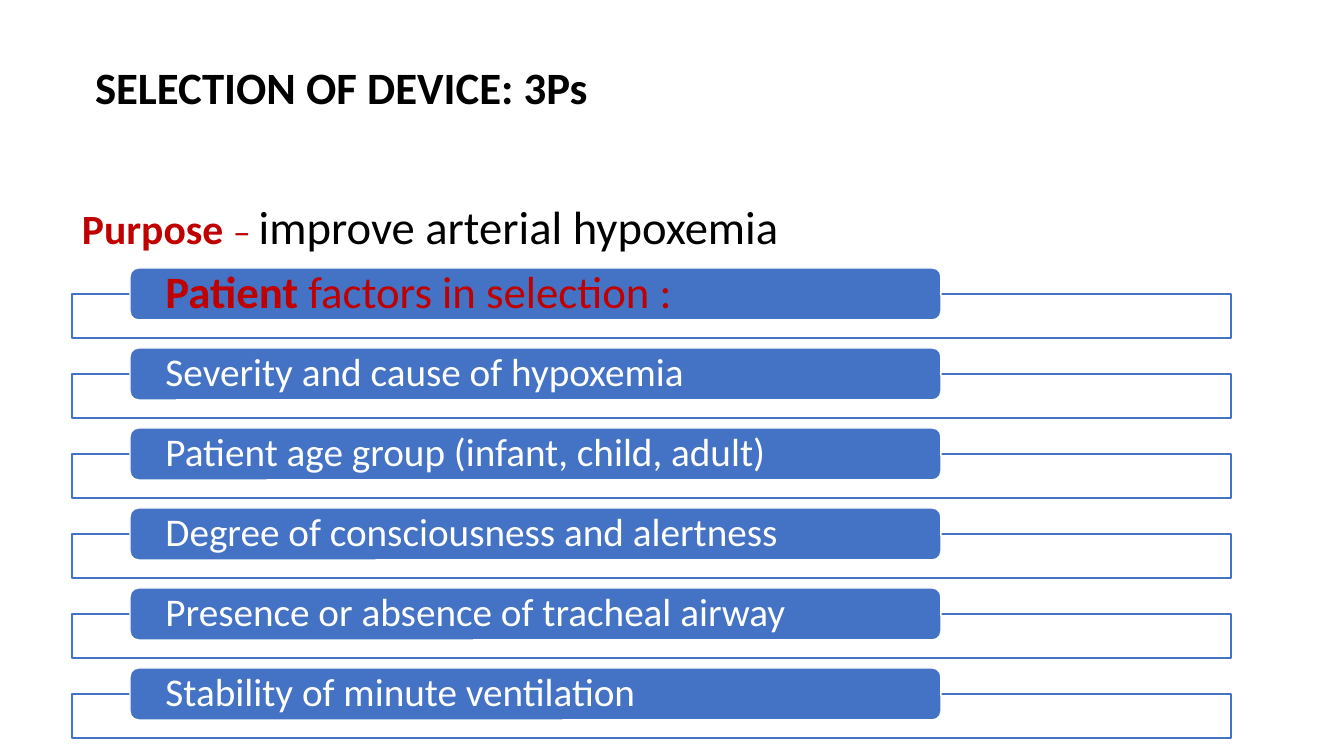
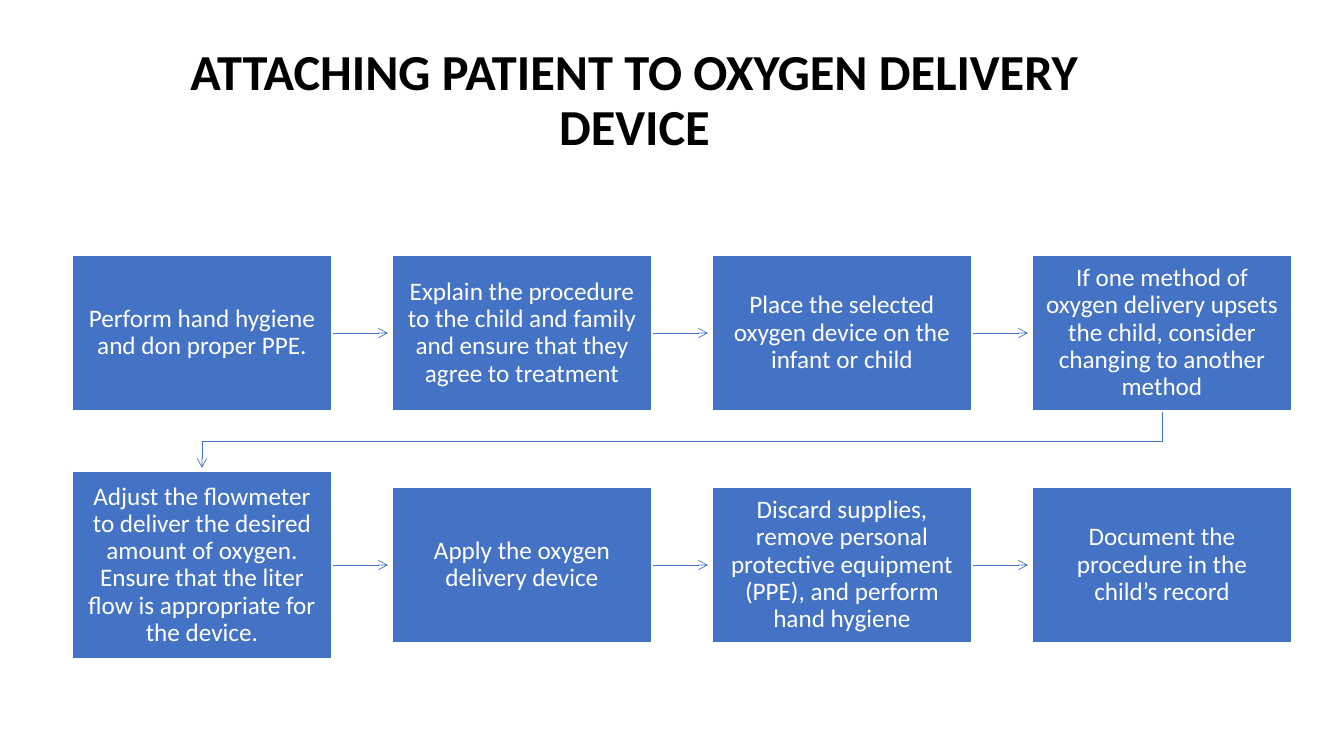
"""Build two slides on choosing and attaching an oxygen delivery device."""
from dataclasses import dataclass
from typing import NamedTuple

from lxml import etree
from pptx import Presentation
from pptx.dml.color import RGBColor
from pptx.enum.shapes import MSO_CONNECTOR, MSO_SHAPE
from pptx.enum.text import MSO_ANCHOR, MSO_AUTO_SIZE, PP_ALIGN
from pptx.oxml.ns import qn
from pptx.util import Emu, Pt

EMU_PER_PX = 914400 / 100.8
LEFT, CENTER = PP_ALIGN.LEFT, PP_ALIGN.CENTER
TOP, MIDDLE = MSO_ANCHOR.TOP, MSO_ANCHOR.MIDDLE
RECT, ROUNDED = MSO_SHAPE.RECTANGLE, MSO_SHAPE.ROUNDED_RECTANGLE
STRAIGHT = MSO_CONNECTOR.STRAIGHT
NO_FIT = MSO_AUTO_SIZE.NONE
TITLE_ONLY = 5


@dataclass(frozen=True)
class Theme:
    """Colours, type sizes and line widths of the deck."""
    font: str = "Calibri"
    blue: str = "4472C4"
    red: str = "C00000"
    black: str = "000000"
    white: str = "FFFFFF"
    heading: float = 32
    title: float = 36
    factor: float = 28
    step: float = 18
    outline: float = 1
    arrow: float = 0.5


class Box(NamedTuple):
    """A rectangle in px."""
    x: int
    y: int
    w: int
    h: int

    @property
    def right(self) -> int:
        return self.x + self.w

    @property
    def bottom(self) -> int:
        return self.y + self.h

    @property
    def cx(self) -> int:
        return self.x + self.w // 2

    @property
    def cy(self) -> int:
        return self.y + self.h // 2


class Run(NamedTuple):
    """A stretch of text in one format."""
    text: str
    size: float
    color: str
    bold: bool = False


@dataclass(frozen=True)
class Step:
    """One step of the procedure and the extra height of its box."""
    text: str
    extra: int = 0


T = Theme()

FACTORS = [
    [Run("Patient ", T.heading, T.red, True), Run("factors in selection :", T.heading, T.red)],
    *([Run(text, T.factor, T.white)] for text in (
        "Severity and cause of hypoxemia",
        "Patient age group (infant, child, adult)",
        "Degree of consciousness and alertness",
        "Presence or absence of tracheal airway",
        "Stability of minute ventilation",
    )),
]

STEP_ROWS = [
    [
        Step("Perform hand hygiene and don proper PPE."),
        Step("Explain the procedure to the child and family and ensure that they agree to treatment"),
        Step("Place the selected oxygen device on the infant or child"),
        Step("If one method of oxygen delivery upsets the child, consider changing to another method"),
    ],
    [
        Step("Adjust the flowmeter to deliver the desired amount of oxygen. "
             "Ensure that the liter flow is appropriate for the device.", extra=32),
        Step("Apply the oxygen delivery device"),
        Step("Discard supplies, remove personal protective equipment (PPE), and perform hand hygiene"),
        Step("Document the procedure in the child’s record"),
    ],
]


def px(n: float) -> Emu:
    """Turn px into EMU."""
    return Emu(round(n * EMU_PER_PX))


def emus(box: Box) -> list[Emu]:
    """Turn a box into EMU."""
    return [px(n) for n in box]


def put_text(sp, runs: list[Run], *, align=LEFT, anchor=MIDDLE, spacing: float = 0.9,
             insets: tuple[int, int] = (10, 5), wrap: bool = True) -> None:
    """Write one formatted paragraph into a shape."""
    tf = sp.text_frame
    tf.auto_size = NO_FIT
    tf.word_wrap = wrap
    tf.vertical_anchor = anchor
    tf.margin_left = tf.margin_right = px(insets[0])
    tf.margin_top = tf.margin_bottom = px(insets[1])
    p = tf.paragraphs[0]
    p.alignment = align
    p.line_spacing = spacing
    for run in runs:
        for i, line in enumerate(run.text.split("\n")):
            if i:
                p.add_line_break()
            r = p.add_run()
            r.text = line
            r.font.name = T.font
            r.font.size = Pt(run.size)
            r.font.bold = run.bold
            r.font.color.rgb = RGBColor.from_string(run.color)


def add_block(s, kind, box: Box, *, fill: str, line: str):
    """Add a filled and outlined shape."""
    sp = s.shapes.add_shape(kind, *emus(box))
    sp.shadow.inherit = False
    sp.fill.solid()
    sp.fill.fore_color.rgb = RGBColor.from_string(fill)
    sp.line.color.rgb = RGBColor.from_string(line)
    sp.line.width = Pt(T.outline)
    return sp


def style_arrow(sp) -> None:
    """Give a line its colour, width and open head."""
    sp.line.color.rgb = RGBColor.from_string(T.blue)
    sp.line.width = Pt(T.arrow)
    etree.SubElement(sp.line._get_or_add_ln(), qn("a:tailEnd"), type="arrow")


def add_arrow(s, x1: int, x2: int, y: int) -> None:
    """Add a level arrow."""
    sp = s.shapes.add_connector(STRAIGHT, px(x1), px(y), px(x2), px(y))
    style_arrow(sp)
    etree.SubElement(sp._element.spPr, qn("a:effectLst"))


def add_bent_arrow(s, points: list[tuple[int, int]]) -> None:
    """Add an arrow that follows several points."""
    fb = s.shapes.build_freeform(*points[0], scale=EMU_PER_PX)
    fb.add_line_segments(points[1:], close=False)
    sp = fb.convert_to_shape()
    sp.shadow.inherit = False
    sp.fill.background()
    style_arrow(sp)


def add_slide(prs, title_box: Box, runs: list[Run], **text_format):
    """Add a slide with its title placed and formatted."""
    s = prs.slides.add_slide(prs.slide_layouts[TITLE_ONLY])
    sp = s.shapes.title
    sp.left, sp.top, sp.width, sp.height = emus(title_box)
    put_text(sp, runs, **text_format)
    return s


def add_factors_slide(prs) -> None:
    """Add the slide on selecting a device."""
    purpose = [
        Run("Purpose ", 29.7, T.red, True),
        Run("– ", 25.2, T.red),
        Run("improve arterial hypoxemia", 33.3, T.black),
    ]
    s = add_slide(prs, Box(72, 204, 1159, 60), purpose, anchor=TOP, insets=(10, 0))
    pitch = 80
    for i, runs in enumerate(FACTORS):
        add_block(s, RECT, Box(72, 294 + i * pitch, 1159, 44), fill=T.white, line=T.blue)
        pill = add_block(s, ROUNDED, Box(130, 268 + i * pitch, 811, 52), fill=T.blue, line=T.white)
        put_text(pill, runs, insets=(33, 0))
    heading = s.shapes.add_textbox(*emus(Box(85, 55, 810, 65)))
    put_text(heading, [Run("SELECTION OF DEVICE: 3Ps", T.heading, T.black, True)],
             anchor=TOP, spacing=1.0)


def add_steps_slide(prs) -> None:
    """Add the slide on attaching the patient."""
    title = Run("ATTACHING PATIENT TO OXYGEN DELIVERY\nDEVICE", T.title, T.black, True)
    s = add_slide(prs, Box(0, 53, 1269, 97), [title], align=CENTER)
    left, pitch, width, height = 72, 320, 260, 156
    tops = (255, 487)
    rows = [
        [Box(left + i * pitch, top - step.extra // 2, width, height + step.extra)
         for i, step in enumerate(steps)]
        for top, steps in zip(tops, STEP_ROWS)
    ]
    for boxes in rows:
        for box in boxes[:-1]:
            add_arrow(s, box.right, box.right + 56, box.cy)
    start, end = rows[0][-1], rows[1][0]
    bend = start.bottom + 30
    add_bent_arrow(s, [(start.cx, start.bottom), (start.cx, bend), (end.cx, bend), (end.cx, end.y - 3)])
    for boxes, steps in zip(rows, STEP_ROWS):
        for box, step in zip(boxes, steps):
            sp = add_block(s, RECT, box, fill=T.blue, line=T.white)
            put_text(sp, [Run(step.text, T.step, T.white)], align=CENTER, insets=(13, 13))


def main() -> None:
    """Build and save the deck."""
    prs = Presentation()
    prs.slide_width, prs.slide_height = px(1344), px(756)
    add_factors_slide(prs)
    add_steps_slide(prs)
    prs.save("out.pptx")


if __name__ == "__main__":
    main()
